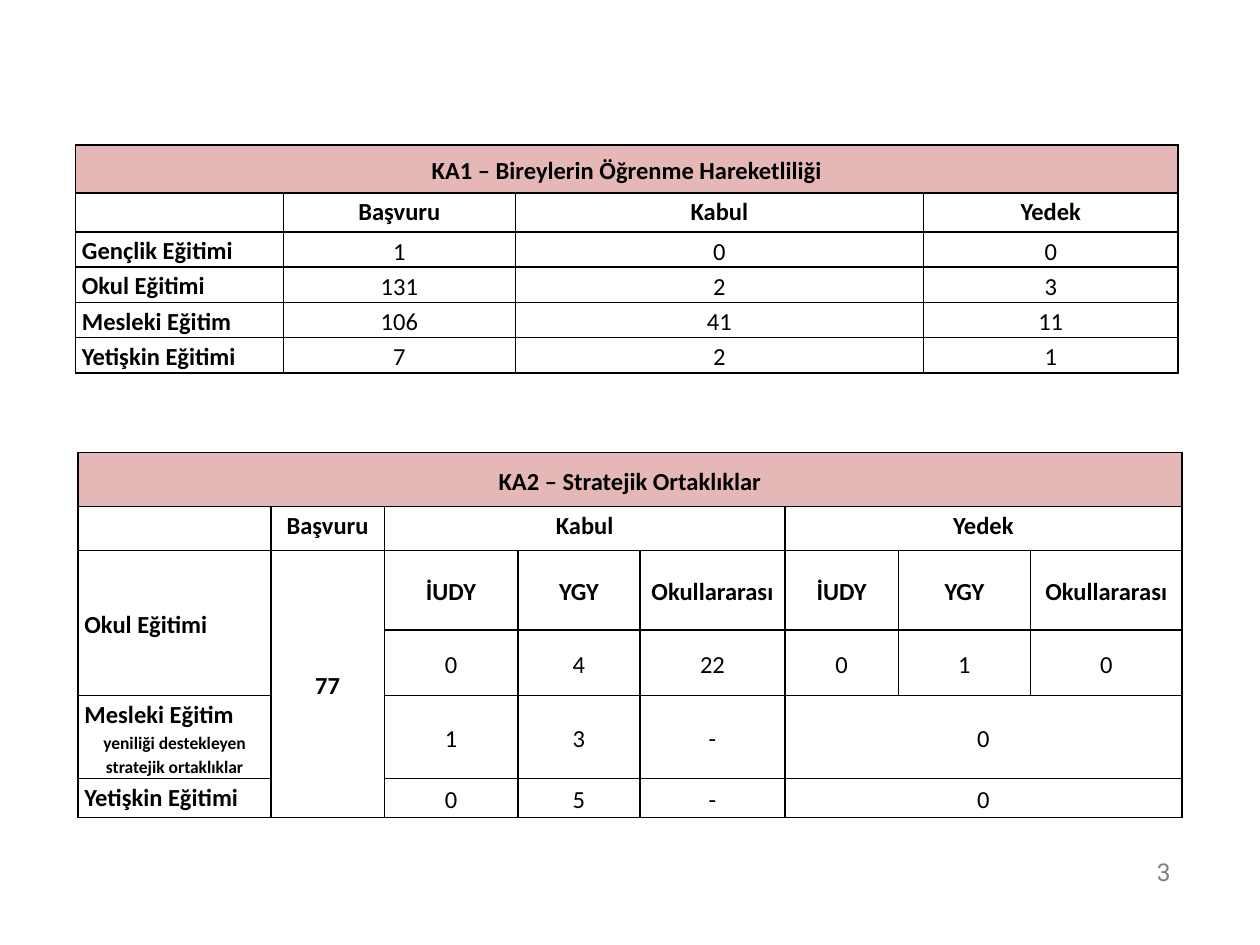
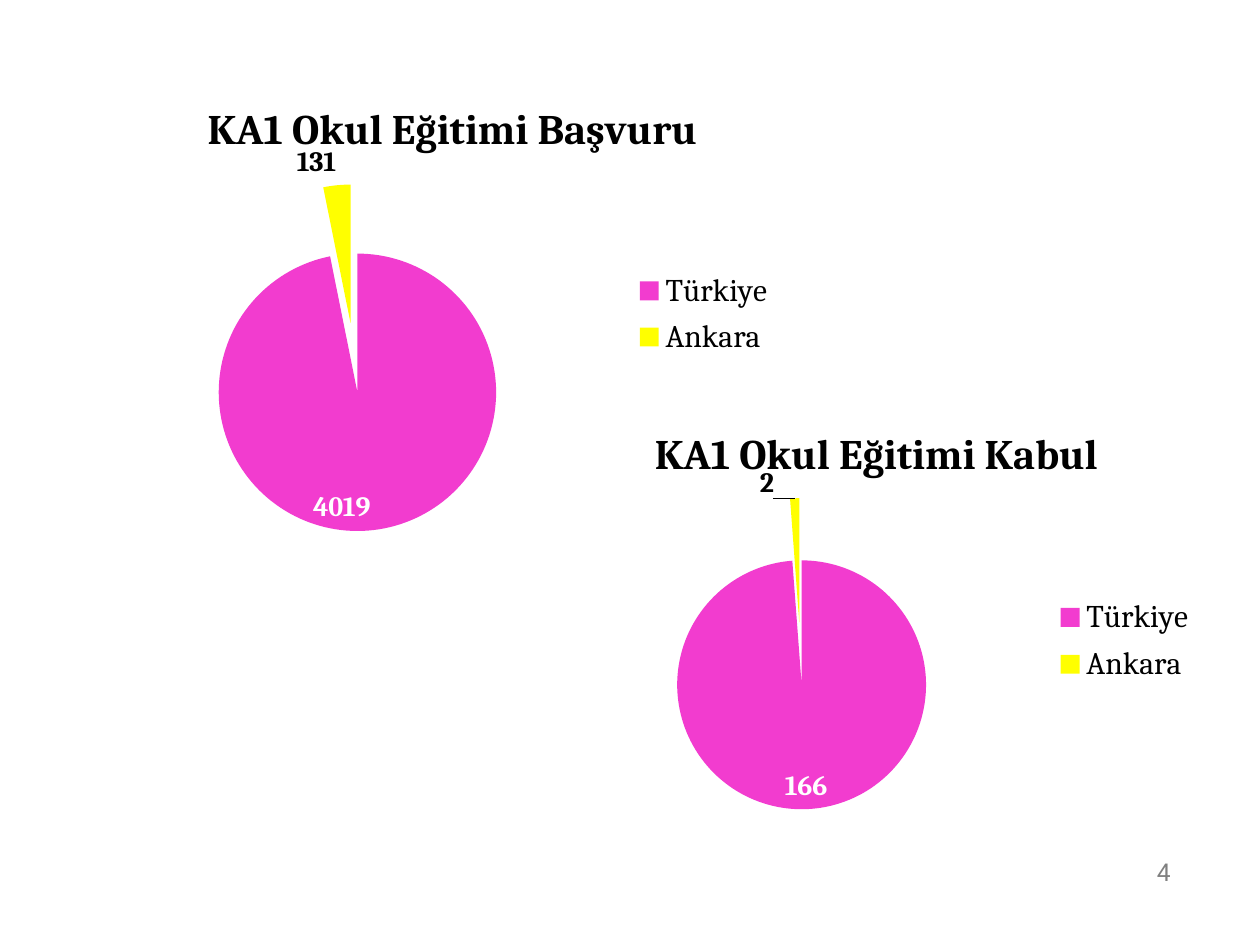
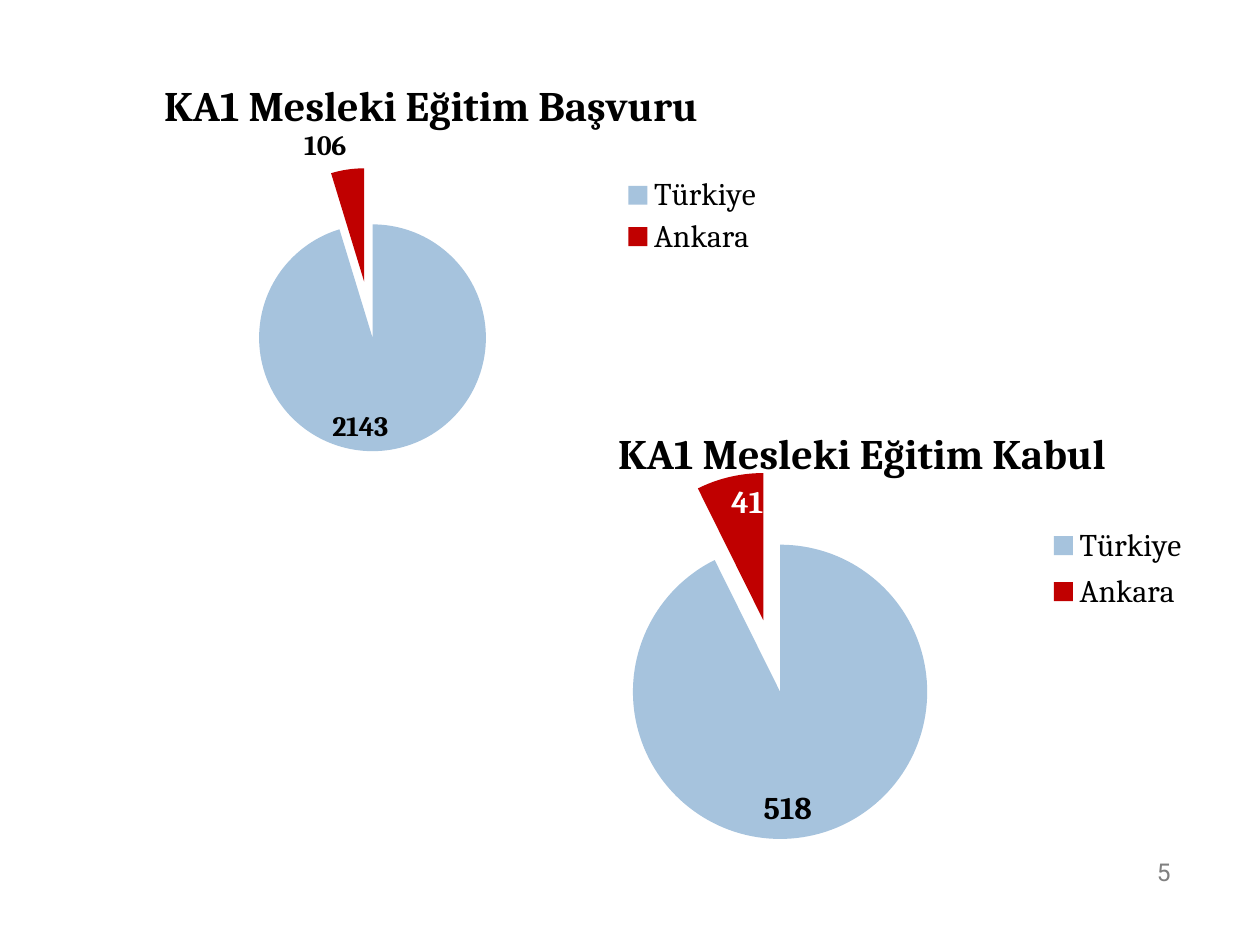
from lxml import etree
from pptx import Presentation
from pptx.chart.data import CategoryChartData
from pptx.dml.color import RGBColor
from pptx.enum.chart import XL_CHART_TYPE, XL_LABEL_POSITION as POS, XL_LEGEND_POSITION
from pptx.enum.text import MSO_ANCHOR, PP_ALIGN
from pptx.oxml import parse_xml
from pptx.oxml.ns import nsdecls, qn
from pptx.util import Inches, Pt

COLORS = {
    "black": "000000", "white": "FFFFFF", "gray": "808080", "rose": "E5B8B7",
    "pink": "F23CCF", "yellow": "FFFF00", "blue": "A6C3DD", "red": "C00000",
}
TABLE_FONT, CHART_FONT, NUMBER_FONT = "Calibri", "Cambria", "Roboto"


class Deck:
    """Holds the shared style and the current slide."""

    def __init__(self):
        self.prs = Presentation()
        self.prs.slide_width, self.prs.slide_height = Inches(10), Inches(7.5)
        self.slide = None

    def new_slide(self, number):
        self.slide = self.prs.slides.add_slide(self.prs.slide_layouts[6])
        tb = self.slide.shapes.add_textbox(Inches(7.06), Inches(6.72), Inches(2.33), Inches(0.4))
        tf = tb.text_frame
        tf.word_wrap = True
        tf.vertical_anchor = MSO_ANCHOR.MIDDLE
        p = tf.paragraphs[0]
        p.alignment = PP_ALIGN.RIGHT
        self.run(p, str(number), 14, NUMBER_FONT, "gray")

    def style(self, font, size, name, color="black", bold=False):
        font.size, font.name, font.bold = Pt(size), name, bold
        font.color.rgb = RGBColor.from_string(COLORS[color])

    def run(self, p, text, size, name, color="black", bold=False):
        r = p.add_run()
        r.text = text
        self.style(r.font, size, name, color, bold)

    def borders(self, cell):
        tcPr = cell._tc.get_or_add_tcPr()
        for side in ("lnL", "lnR", "lnT", "lnB"):
            tcPr.append(parse_xml(
                f'<a:{side} {nsdecls("a")} w="12700"><a:solidFill>'
                f'<a:srgbClr val="{COLORS["black"]}"/></a:solidFill></a:{side}>'))

    def cell_paragraph(self, cell, index, text, size, bold, centered):
        tf = cell.text_frame
        p = tf.add_paragraph() if index else tf.paragraphs[0]
        p.line_spacing = 1.15
        p.alignment = PP_ALIGN.CENTER if centered else PP_ALIGN.LEFT
        if text:
            self.run(p, text, size, TABLE_FONT, bold=bold)
        else:
            p.font.size = Pt(size)

    def table(self, left, top, widths, heights, rows, merges=(), head_rows=2):
        frame = self.slide.shapes.add_table(
            len(rows), len(widths), Inches(left), Inches(top),
            Inches(sum(widths)), Inches(sum(heights)))
        tbl = frame.table
        tbl.first_row = tbl.horz_banding = False
        for col, width in zip(tbl.columns, widths):
            col.width = Inches(width)
        for row, height in zip(tbl.rows, heights):
            row.height = Inches(height)
        for r1, c1, r2, c2 in ((0, 0, 0, len(widths) - 1), *merges):
            tbl.cell(r1, c1).merge(tbl.cell(r2, c2))
        for r, row in enumerate(rows):
            for c in range(len(widths)):
                cell = tbl.cell(r, c)
                self.borders(cell)
                if r == 0:
                    cell.fill.solid()
                    cell.fill.fore_color.rgb = RGBColor.from_string(COLORS["rose"])
                else:
                    cell.fill.background()
                cell.margin_left = cell.margin_right = Inches(0.05)
                cell.margin_top = cell.margin_bottom = 0
                at_top = r == 1 or (c == 0 and not cell.is_merge_origin)
                cell.vertical_anchor = MSO_ANCHOR.TOP if at_top else MSO_ANCHOR.MIDDLE
                lines = (row[c] if c < len(row) else "").split("\n")
                for i, line in enumerate(lines):
                    self.cell_paragraph(
                        cell, i, line, 10 if i else 14, r < head_rows or c == 0,
                        r == 0 or c > 0 or i > 0)

    def layout(self, parent, index, inner=False, **place):
        for old in parent.findall(qn("c:layout")):
            parent.remove(old)
        layout = etree.Element(qn("c:layout"))
        manual = etree.SubElement(layout, qn("c:manualLayout"))
        if inner:
            etree.SubElement(manual, qn("c:layoutTarget")).set("val", "inner")
        if "w" in place:
            for mode in ("xMode", "yMode"):
                etree.SubElement(manual, qn(f"c:{mode}")).set("val", "edge")
        for key, value in place.items():
            etree.SubElement(manual, qn(f"c:{key}")).set("val", str(value))
        parent.insert(index, layout)

    def pie(self, box, title, values, fills, labels, plot, legend, size=16, shift=None):
        data = CategoryChartData()
        data.categories = ["Türkiye", "Ankara"]
        data.add_series(title, values)
        chart = self.slide.shapes.add_chart(
            XL_CHART_TYPE.PIE, *map(Inches, box), data).chart
        self.style(chart.font, 10, CHART_FONT)
        chart.has_title = True
        self.run(chart.chart_title.text_frame.paragraphs[0], title, 24, CHART_FONT, bold=True)
        chart.chart_title.include_in_layout = False
        chart.has_legend = True
        chart.legend.position = XL_LEGEND_POSITION.RIGHT
        chart.legend.include_in_layout = False
        self.style(chart.legend.font, 18, CHART_FONT)

        space = chart._chartSpace
        self.layout(space.find(".//" + qn("c:plotArea")), 0, inner=True, **dict(zip("xywh", plot)))
        self.layout(space.find(".//" + qn("c:legend")), 1, **dict(zip("xywh", legend)))

        pie_plot = chart.plots[0]
        pie_plot.vary_by_categories = True
        series = pie_plot.series[0]
        explosion = etree.Element(qn("c:explosion"))
        explosion.set("val", "25")
        space.find(".//" + qn("c:ser")).find(qn("c:tx")).addnext(explosion)
        series.data_labels.show_value = True
        self.style(series.data_labels.font, size, CHART_FONT, bold=True)
        for i, (fill, (color, position)) in enumerate(zip(fills, labels)):
            point = series.points[i]
            point.format.fill.solid()
            point.format.fill.fore_color.rgb = RGBColor.from_string(COLORS[fill])
            self.style(point.data_label.font, size, CHART_FONT, color, True)
            point.data_label.position = position
        if shift:
            ankara_label = space.findall(".//" + qn("c:dLbl"))[1]
            self.layout(ankara_label, 1, **dict(zip("xy", shift)))


def main():
    deck = Deck()

    deck.new_slide(3)
    deck.table(
        0.6, 1.15, [1.65, 1.84, 3.24, 2.02], [0.38, 0.31] + [0.28] * 4,
        [["KA1 – Bireylerin Öğrenme Hareketliliği"],
         ["", "Başvuru", "Kabul", "Yedek"],
         ["Gençlik Eğitimi", "1", "0", "0"],
         ["Okul Eğitimi", "131", "2", "3"],
         ["Mesleki Eğitim", "106", "41", "11"],
         ["Yetişkin Eğitimi", "7", "2", "1"]])
    kinds = ["İUDY", "YGY", "Okullararası"]
    deck.table(
        0.62, 3.59, [1.53, 0.9, 1.06, 0.97, 1.15, 0.9, 1.05, 1.2],
        [0.43, 0.35, 0.63, 0.52, 0.66, 0.31],
        [["KA2 – Stratejik Ortaklıklar"],
         ["", "Başvuru", "Kabul", "", "", "Yedek"],
         ["Okul Eğitimi", "77"] + kinds * 2,
         ["", "", "0", "4", "22", "0", "1", "0"],
         ["Mesleki Eğitim\nyeniliği destekleyen stratejik ortaklıklar", "", "1", "3", "-", "0"],
         ["Yetişkin Eğitimi", "", "0", "5", "-", "0"]],
        merges=[(1, 2, 1, 4), (1, 5, 1, 7), (2, 0, 3, 0), (2, 1, 5, 1),
                (4, 5, 4, 7), (5, 5, 5, 7)],
        head_rows=3)

    school = ("pink", "yellow")
    school_labels = (("white", POS.INSIDE_END), ("black", POS.OUTSIDE_END))
    deck.new_slide(4)
    deck.pie((0.7, 0.62, 5.78, 3.67), "KA1 Okul Eğitimi Başvuru", (4019, 131),
             school, school_labels, (0.01, 0.23, 0.71, 0.75), (0.74, 0.4, 0.21, 0.22))
    deck.pie((4.22, 3.2, 5.47, 3.43), "KA1 Okul Eğitimi Kabul", (166, 2),
             school, school_labels, (0, 0.22, 0.78, 0.72), (0.75, 0.43, 0.22, 0.24),
             shift=(-0.04, 0.02))

    vocational = ("blue", "red")
    deck.new_slide(5)
    deck.pie((0.5, 0.44, 5.84, 3.31), "KA1 Mesleki Eğitim Başvuru", (2143, 106),
             vocational, (("black", POS.INSIDE_END), ("black", POS.OUTSIDE_END)),
             (0.08, 0.27, 0.67, 0.68), (0.75, 0.28, 0.21, 0.21))
    deck.pie((3.98, 3.2, 5.72, 3.65), "KA1 Mesleki Eğitim Kabul", (518, 41),
             vocational, (("black", POS.INSIDE_END), ("white", POS.INSIDE_END)),
             (0, 0.15, 0.75, 0.8), (0.75, 0.25, 0.21, 0.22), size=18)

    deck.prs.save("out.pptx")


if __name__ == "__main__":
    main()
